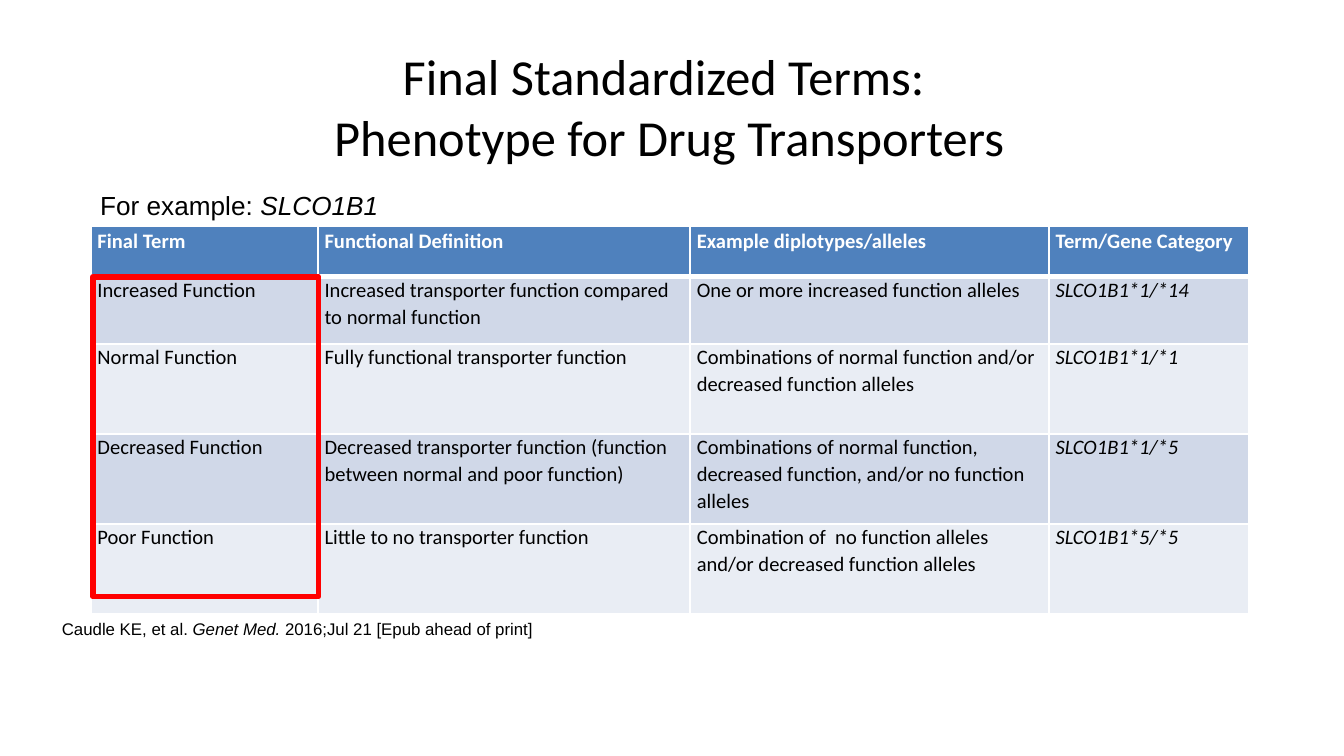
from dataclasses import dataclass

from lxml.etree import SubElement
from pptx import Presentation
from pptx.dml.color import RGBColor
from pptx.enum.shapes import MSO_SHAPE
from pptx.enum.text import MSO_ANCHOR, PP_ALIGN
from pptx.oxml.ns import qn
from pptx.util import Inches, Pt

SLIDE_WIDTH = Inches(10)
SLIDE_HEIGHT = SLIDE_WIDTH * 9 // 16
BLACK, WHITE, RED = "000000", "FFFFFF", "FF0000"
HEADER_FILL, BAND_FILLS = "4F81BD", ("D0D8E8", "E9EDF4")

# Percent of the slide's width and height
COLUMN_SHARES = (16.9, 27.7, 26.7, 14.9)
ROW_SHARES = (6.76, 8.88, 11.9, 11.9, 11.9)

TERMS = (
    ("Final Term", "Functional Definition", "Example diplotypes/alleles", "Term/Gene Category"),
    ("Increased Function", "Increased transporter function compared to normal function",
     "One or more increased function alleles", "SLCO1B1*1/*14"),
    ("Normal Function", "Fully functional transporter function",
     "Combinations of normal function and/or decreased function alleles", "SLCO1B1*1/*1"),
    ("Decreased Function", "Decreased transporter function (function between normal and poor function)",
     "Combinations of normal function, decreased function, and/or no function alleles", "SLCO1B1*1/*5"),
    ("Poor Function", "Little to no transporter function",
     "Combination of  no function alleles and/or decreased function alleles", "SLCO1B1*5/*5"),
)


def across(share: float) -> int:
    return round(SLIDE_WIDTH * share / 100)


def down(share: float) -> int:
    return round(SLIDE_HEIGHT * share / 100)


@dataclass(frozen=True)
class Area:
    """A rectangle in percent of the slide's width and height."""
    left: float
    top: float
    width: float
    height: float

    def place(self) -> tuple[int, int, int, int]:
        return across(self.left), down(self.top), across(self.width), down(self.height)


@dataclass(frozen=True)
class Phrase:
    text: str
    italic: bool = False


@dataclass(frozen=True)
class Caption:
    area: Area
    phrases: tuple[Phrase, ...]
    size: float
    font: str = "Arial"
    align: PP_ALIGN = PP_ALIGN.LEFT
    anchor: MSO_ANCHOR = MSO_ANCHOR.TOP
    wrap: bool = True
    space_before: float = 0


CAPTIONS = (
    Caption(Area(-0.2, 6.67, 100, 14.59),
            (Phrase("Final Standardized Terms: \nPhenotype for Drug Transporters"),),
            27, "Calibri", PP_ALIGN.CENTER, MSO_ANCHOR.MIDDLE),
    Caption(Area(6.75, 24.36, 22.8, 5.69),
            (Phrase("For example: "), Phrase("SLCO1B1", italic=True)), 14, wrap=False),
    Caption(Area(3.9, 81.14, 70.1, 4.09),
            (Phrase("Caudle KE, et al. "), Phrase("Genet Med.", italic=True),
             Phrase(" 2016;Jul 21 [Epub ahead of print]")), 9, space_before=1.8),
)
TABLE_AREA = Area(6.75, 29.87, sum(COLUMN_SHARES), sum(ROW_SHARES))
HIGHLIGHT_AREA = Area(6.9, 36.62, 16.8, 42.31)


def color(code: str) -> RGBColor:
    return RGBColor.from_string(code)


def style_font(font, name: str, size: float, code: str, bold: bool = False, italic: bool = False) -> None:
    font.name, font.size = name, Pt(size)
    font.bold, font.italic = bold, italic
    font.color.rgb = color(code)


def set_margins(target, side: float, top: float, bottom: float) -> None:
    target.margin_left = target.margin_right = Inches(side)
    target.margin_top, target.margin_bottom = Inches(top), Inches(bottom)


def draw_caption(slide, caption: Caption) -> None:
    frame = slide.shapes.add_textbox(*caption.area.place()).text_frame
    frame.word_wrap, frame.vertical_anchor = caption.wrap, caption.anchor
    set_margins(frame, 0.07, 0.04, 0.04)
    paragraph = frame.paragraphs[0]
    paragraph.alignment = caption.align
    paragraph.space_before = Pt(caption.space_before)
    first, *others = caption.phrases
    paragraph.text = first.text
    for run in paragraph.runs:
        style_font(run.font, caption.font, caption.size, BLACK, italic=first.italic)
    for phrase in others:
        run = paragraph.add_run()
        run.text = phrase.text
        style_font(run.font, caption.font, caption.size, BLACK, italic=phrase.italic)


def draw_borders(cell, bottom_width: float) -> None:
    """Must run before the cell's fill is set, as borders come first in the XML."""
    properties = cell._tc.get_or_add_tcPr()
    for side, width in (("L", 1), ("R", 1), ("T", 1), ("B", bottom_width)):
        border = SubElement(properties, qn(f"a:ln{side}"), w=str(Pt(width)))
        fill = SubElement(border, qn("a:solidFill"))
        SubElement(fill, qn("a:srgbClr"), val=WHITE)


def draw_cell(cell, text: str, row: int, column: int) -> None:
    header = row == 0
    draw_borders(cell, 3 if header else 1)
    cell.fill.solid()
    cell.fill.fore_color.rgb = color(HEADER_FILL if header else BAND_FILLS[(row - 1) % 2])
    set_margins(cell, 0.05, 0.01 if header else 0, 0)
    cell.text_frame.text = text
    paragraph = cell.text_frame.paragraphs[0]
    paragraph.line_spacing, paragraph.space_before = 1.05, Pt(6)
    gene = not header and column == len(COLUMN_SHARES) - 1
    style_font(paragraph.runs[0].font, "Calibri", 11, WHITE if header else BLACK, header, gene)


def draw_terms(slide) -> None:
    table = slide.shapes.add_table(len(ROW_SHARES), len(COLUMN_SHARES), *TABLE_AREA.place()).table
    for column, share in zip(table.columns, COLUMN_SHARES):
        column.width = across(share)
    for row, share in zip(table.rows, ROW_SHARES):
        row.height = down(share)
    for row, texts in enumerate(TERMS):
        for column, text in enumerate(texts):
            draw_cell(table.cell(row, column), text, row, column)


def draw_highlight(slide) -> None:
    highlight = slide.shapes.add_shape(MSO_SHAPE.RECTANGLE, *HIGHLIGHT_AREA.place())
    highlight.shadow.inherit = False
    highlight.fill.background()
    highlight.line.color.rgb = color(RED)
    highlight.line.width = Pt(3)


def main() -> None:
    presentation = Presentation()
    presentation.slide_width, presentation.slide_height = SLIDE_WIDTH, SLIDE_HEIGHT
    slide = presentation.slides.add_slide(presentation.slide_layouts[6])
    draw_terms(slide)
    for caption in CAPTIONS:
        draw_caption(slide, caption)
    draw_highlight(slide)
    presentation.save("out.pptx")


if __name__ == "__main__":
    main()
